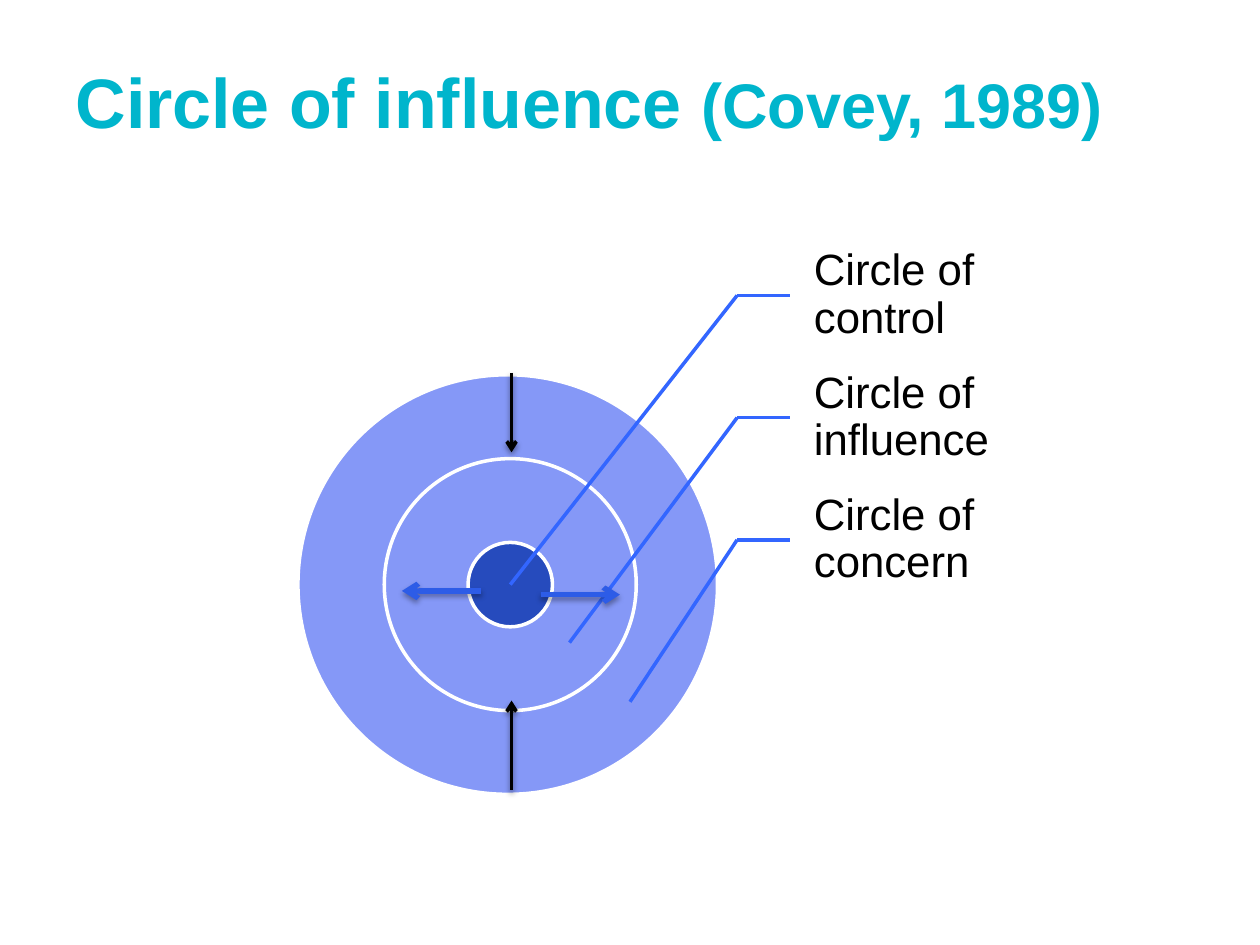
from dataclasses import dataclass
from lxml.etree import SubElement
from pptx import Presentation
from pptx.dml.color import RGBColor
from pptx.enum.shapes import MSO_CONNECTOR, MSO_SHAPE
from pptx.enum.text import MSO_ANCHOR, MSO_AUTO_SIZE, PP_ALIGN
from pptx.oxml import parse_xml
from pptx.oxml.ns import nsdecls, qn
from pptx.util import Inches, Pt


@dataclass(frozen=True)
class Theme:
    font: str = "Arial"
    title: str = "00B5CC"
    text: str = "000000"
    ring: str = "8598F7"
    core: str = "264BBD"
    edge: str = "FFFFFF"
    lead: str = "3366FF"
    push: str = "2D5CE7"
    shade: str = "808080"
    label: int = 25


THEME = Theme()
WIDE, HIGH = 10, 7.5
TITLE = [("Circle of influence ", 40), ("(Covey, 1989)", 36)]
MID_X, MID_Y = 4.05, 4.64
# diameter, shift of the centre, fill
RINGS = [(3.33, -0.02, THEME.ring), (2, 0, THEME.ring), (0.67, 0, THEME.core)]
# label, point inside its ring
LABELS = [
    ("Circle of control", (MID_X, MID_Y)),
    ("Circle of influence", (4.52, 5.1)),
    ("Circle of concern", (5, 5.57)),
]
LEFT, TOP, COL, ROW = 6.27, 1.86, 1.67, 0.97
BEND = 5.85
# start, end, colour, width, shadow strength
ARROWS = [
    ((4.06, 6.27), (4.06, 5.56), THEME.text, 2, 38),
    ((4.06, 2.96), (4.06, 3.59), THEME.text, 2, 38),
    ((3.82, 4.69), (3.19, 4.69), THEME.push, 3, 35),
    ((4.29, 4.72), (4.92, 4.72), THEME.push, 3, 35),
]


def color(code):
    return RGBColor.from_string(code)


def shadow(code, alpha, blur, dist, angle):
    return parse_xml(
        f'<a:effectLst {nsdecls("a")}><a:outerShdw blurRad="{Pt(blur)}" '
        f'dist="{Pt(dist)}" dir="{angle * 60000}" algn="ctr" rotWithShape="0">'
        f'<a:srgbClr val="{code}"><a:alpha val="{alpha * 1000}"/></a:srgbClr>'
        '</a:outerShdw></a:effectLst>')


def write(para, text, size, code, bold=False):
    run = para.add_run()
    run.text = text
    font = run.font
    font.name, font.size, font.bold = THEME.font, Pt(size), bold
    font.color.rgb = color(code)
    return run


def add_title(slide):
    title = slide.shapes.title
    title.left, title.top = Inches(0.5), Inches(0.17)
    title.width, title.height = Inches(8.5), Inches(1.25)
    frame = title.text_frame
    frame.auto_size = MSO_AUTO_SIZE.NONE
    frame.vertical_anchor = MSO_ANCHOR.MIDDLE
    para = frame.paragraphs[0]
    para.alignment = PP_ALIGN.LEFT
    for text, size in TITLE:
        run = write(para, text, size, THEME.title, True)
        fill = run.font._element.find(qn("a:solidFill"))
        fill.addnext(shadow(THEME.shade, 100, 0, 2.5, 45))


def add_ring(slide, size, shift, code):
    ring = slide.shapes.add_shape(
        MSO_SHAPE.OVAL, Inches(MID_X + shift - size / 2),
        Inches(MID_Y - size / 2), Inches(size), Inches(size))
    ring.shadow.inherit = False
    ring.fill.solid()
    ring.fill.fore_color.rgb = color(code)
    ring.line.color.rgb = color(THEME.edge)
    ring.line.width = Pt(2)


def add_line(slide, start, end, code, width):
    line = slide.shapes.add_connector(
        MSO_CONNECTOR.STRAIGHT, *map(Inches, start + end))
    line.line.color.rgb = color(code)
    line.line.width = Pt(width)
    return line


def add_label(slide, row, text, point):
    top = TOP + row * ROW
    box = slide.shapes.add_textbox(
        Inches(LEFT), Inches(top), Inches(COL), Inches(ROW))
    frame = box.text_frame
    frame.word_wrap = True
    frame.vertical_anchor = MSO_ANCHOR.MIDDLE
    frame.margin_left = Inches(0.19)
    frame.margin_top = frame.margin_right = frame.margin_bottom = Inches(0.03)
    para = frame.paragraphs[0]
    para.line_spacing = 0.9
    write(para, text, THEME.label, THEME.text)

    bend = (BEND, top + ROW / 2)
    for end in ((LEFT, bend[1]), point):
        line = add_line(slide, bend, end, THEME.lead, 2)
        SubElement(line._element.spPr, qn("a:effectLst"))
        if end != point:
            line.end_connect(box, 1)


def add_arrow(slide, start, end, code, width, alpha):
    line = add_line(slide, start, end, code, width)
    SubElement(line.line._get_or_add_ln(), qn("a:tailEnd"), type="arrow")
    line._element.spPr.append(shadow(THEME.text, alpha, 3.1, 1.7, 90))


def main():
    deck = Presentation()
    deck.slide_width, deck.slide_height = Inches(WIDE), Inches(HIGH)
    slide = deck.slides.add_slide(deck.slide_layouts[5])
    add_title(slide)
    for ring in RINGS:
        add_ring(slide, *ring)
    for row, label in enumerate(LABELS):
        add_label(slide, row, *label)
    for arrow in ARROWS:
        add_arrow(slide, *arrow)
    deck.save("out.pptx")


if __name__ == "__main__":
    main()
